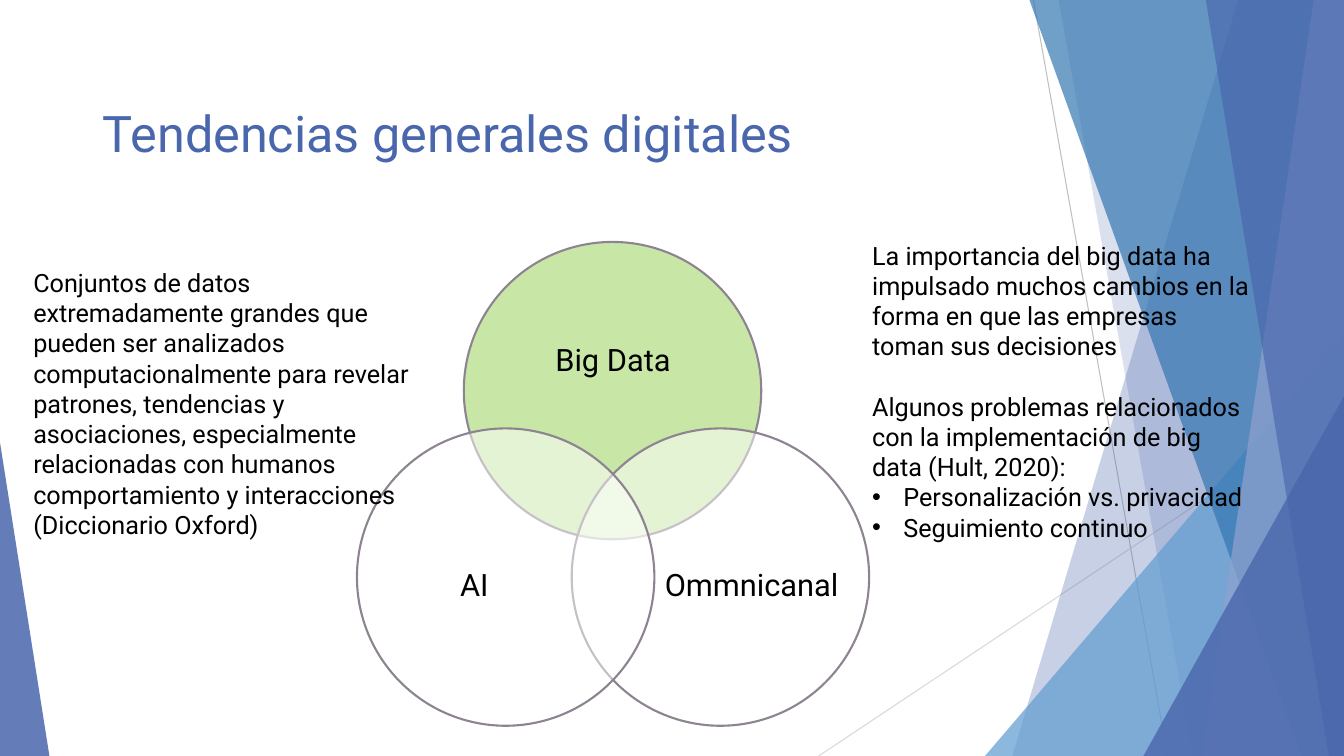
from lxml.etree import SubElement
from pptx import Presentation
from pptx.dml.color import RGBColor
from pptx.enum.shapes import MSO_CONNECTOR as CONN, MSO_SHAPE as SHAPE
from pptx.enum.text import MSO_ANCHOR as ANCHOR, MSO_AUTO_SIZE as AUTOSIZE, PP_ALIGN as ALIGN
from pptx.oxml.ns import qn
from pptx.util import Inches, Pt

NAVY = RGBColor(0x4A, 0x66, 0xAC)
STEEL = RGBColor(0x34, 0x77, 0xB2)
SKY = RGBColor(0x62, 0x9D, 0xD1)
LAVENDER = RGBColor(0x90, 0xA2, 0xCF)
GREEN = RGBColor(0x92, 0xD0, 0x50)
MAUVE = RGBColor(0x8E, 0x83, 0x91)
GRAY = RGBColor(0xBF, 0xBF, 0xBF)
SILVER = RGBColor(0xD9, 0xD9, 0xD9)
WHITE = RGBColor(0xFF, 0xFF, 0xFF)
BLACK = RGBColor(0, 0, 0)
FONT = "Roboto"
W, H = 13.33, 7.5


def paint(sp, color, opacity):
    sp.shadow.inherit = False
    sp.fill.solid()
    sp.fill.fore_color.rgb = color
    clr = sp.fill._xPr.find(qn("a:solidFill"))[0]
    SubElement(clr, qn("a:alpha")).set("val", str(opacity * 1000))
    sp.line.fill.background()


def write(p, text, size, color=BLACK):
    r = p.add_run()
    r.text = text
    r.font.name = FONT
    r.font.size = Pt(size)
    r.font.color.rgb = color


prs = Presentation()
prs.slide_width, prs.slide_height = Inches(W), Inches(H)
s = prs.slides.add_slide(prs.slide_layouts[3])
title, definition, impact = s.placeholders

for x1, y1, x2, color in [(10.25, 0, 11.58, GRAY), (W, 4.03, 8.12, SILVER)]:
    ray = s.shapes.add_connector(CONN.STRAIGHT, Inches(x1), Inches(y1), Inches(x2), Inches(H))
    ray.line.color.rgb = color
    ray.line.width = Pt(0.75)
    SubElement(ray.element.spPr, qn("a:effectLst"))

bands = [
    ("band", 12.28, 10.04, NAVY, 30),
    ("band", 10.5, 11.83, NAVY, 20),
    ("corner", 9.77, 3.33, SKY, 72),
    ("band", 10.21, 12.91, STEEL, 70),
    ("band", 13.03, 11.92, LAVENDER, 70),
    ("band", 11.96, 13.18, NAVY, 65),
    ("corner", 11.34, 3.93, NAVY, 80),
]
for kind, a, b, color, opacity in bands:
    if kind == "band":
        fb = s.shapes.build_freeform(Inches(a), 0)
        fb.add_line_segments([(Inches(x), Inches(y)) for x, y in [(W, 0), (W, H), (b, H)]])
        sp = fb.convert_to_shape()
    else:
        sp = s.shapes.add_shape(SHAPE.ISOSCELES_TRIANGLE, Inches(a), Inches(b),
                                Inches(W - a), Inches(H - b))
        sp.adjustments[0] = 1
    paint(sp, color, opacity)

wedge = s.shapes.add_shape(SHAPE.ISOSCELES_TRIANGLE, 0, Inches(4.39), Inches(0.49), Inches(H - 4.39))
wedge.adjustments[0] = 0
paint(wedge, NAVY, 85)

D = 2.95
venn = [
    ("Big Data", 4.6, 2.4, GREEN, (5, 2.92, 2.16, 1.33)),
    ("Ommnicanal", 5.67, 4.25, WHITE, (6.57, 5.01, 1.77, 1.62)),
    ("AI", 3.54, 4.25, WHITE, (3.82, 5.01, 1.77, 1.62)),
]
for label, x, y, color, box in venn:
    circle = s.shapes.add_shape(SHAPE.OVAL, Inches(x), Inches(y), Inches(D), Inches(D))
    paint(circle, color, 50)
    circle.line.color.rgb = MAUVE
    circle.line.width = Pt(1.5)
    tf = s.shapes.add_textbox(*map(Inches, box)).text_frame
    tf.word_wrap = True
    tf.margin_left = tf.margin_right = tf.margin_top = tf.margin_bottom = 0
    tf.vertical_anchor = ANCHOR.MIDDLE
    p = tf.paragraphs[0]
    p.alignment = ALIGN.CENTER
    p.line_spacing = 0.9
    write(p, label, 22)

texts = [
    (definition, (0.23, 2.6, 4.06, 2.83), 18, BLACK, [
        ("Conjuntos de datos extremadamente grandes que pueden ser analizados "
         "computacionalmente para revelar patrones, tendencias y asociaciones, "
         "especialmente relacionadas con humanos comportamiento y interacciones "
         "(Diccionario Oxford)", 0, False)]),
    (impact, (8.55, 2.33, 3.96, 2.83), 18, BLACK, [
        ("La importancia del big data ha impulsado muchos cambios en la forma "
         "en que las empresas toman sus decisiones", 0, False),
        ("Algunos problemas relacionados con la implementación de big data "
         "(Hult, 2020):", 21.5, False),
        ("Personalización vs. privacidad", 0, True),
        ("Seguimiento continuo", 0, True)]),
    (title, (0.92, 0.96, 10.74, 1.45), 36, NAVY, [
        ("Tendencias generales digitales", 0, False)]),
]
for ph, box, size, color, paragraphs in texts:
    ph.left, ph.top, ph.width, ph.height = map(Inches, box)
    s.shapes.element.append(ph.element)
    tf = ph.text_frame
    tf.word_wrap = True
    tf.auto_size = AUTOSIZE.NONE
    tf.vertical_anchor = ANCHOR.TOP
    for i, (text, gap, bullet) in enumerate(paragraphs):
        p = tf.add_paragraph() if i else tf.paragraphs[0]
        p.alignment = ALIGN.LEFT
        p.space_before = Pt(gap)
        pPr = p._p.get_or_add_pPr()
        indent = Inches(0.31) if bullet else 0
        pPr.set("marL", str(indent))
        pPr.set("indent", str(-indent))
        if bullet:
            SubElement(pPr, qn("a:buFont")).set("typeface", "Arial")
            SubElement(pPr, qn("a:buChar")).set("char", "•")
        else:
            SubElement(pPr, qn("a:buNone"))
        write(p, text, size, color)

prs.save("out.pptx")
